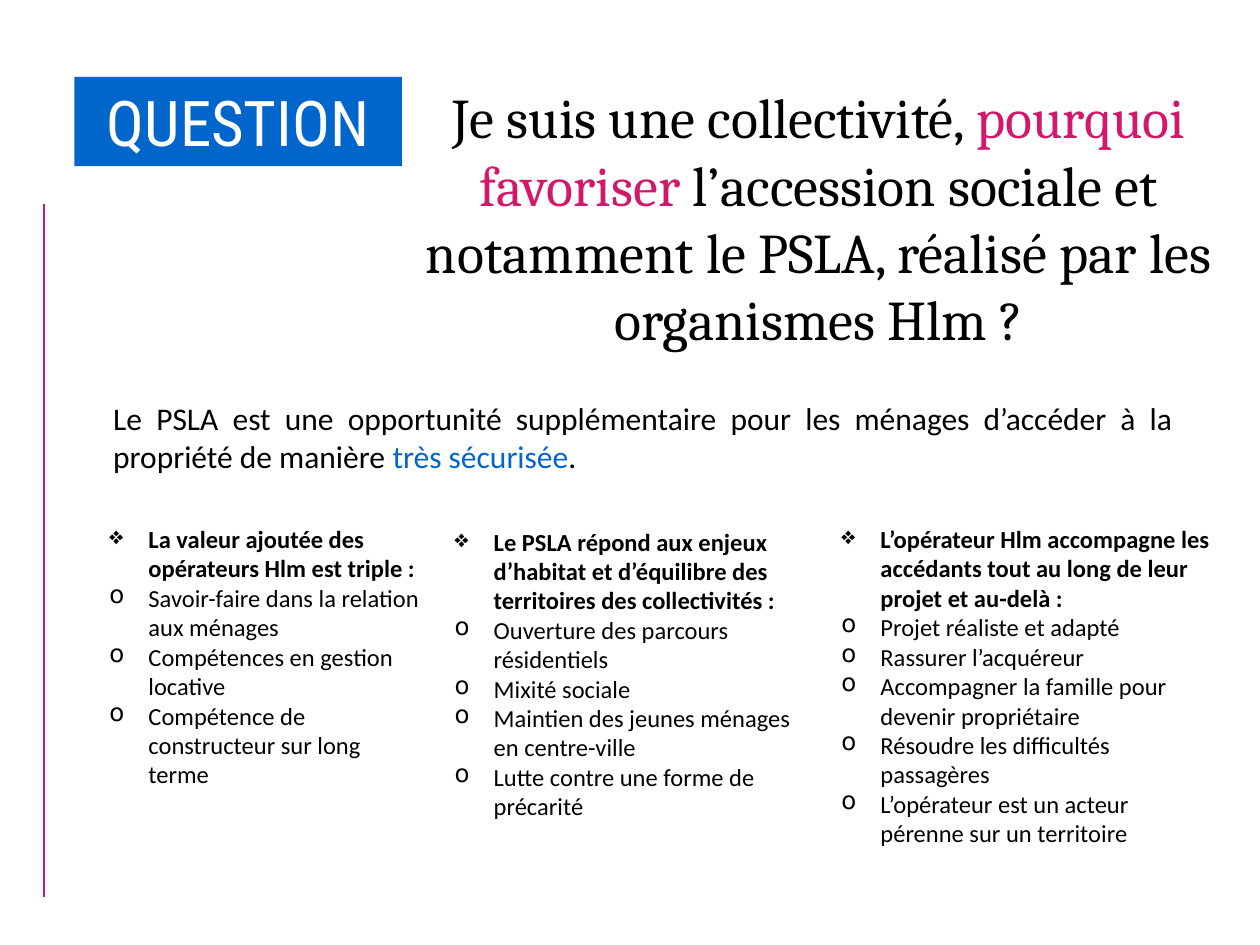
from lxml import etree
from pptx import Presentation
from pptx.dml.color import RGBColor
from pptx.enum import shapes, text
from pptx.oxml import ns
from pptx.util import Inches, Pt

BLACK, WHITE, BLUE, PINK = "000000", "FFFFFF", "0066CC", "D1196C"
INDENT = 0.31

TITLE = [
    ("Je suis une collectivité, ", BLACK),
    ("pourquoi favoriser", PINK),
    (" l’accession sociale et notamment le PSLA, réalisé par les organismes Hlm ?", BLACK),
]
INTRO = [
    ("Le PSLA est une opportunité supplémentaire pour les ménages d’accéder "
     "à la propriété de manière ", BLACK),
    ("très sécurisée", BLUE),
    (".", BLACK),
]
COLUMNS = [
    ((0.77, 4.11, 2.66, 2.22), "La valeur ajoutée des opérateurs Hlm est triple :", [
        "Savoir-faire dans la relation aux ménages",
        "Compétences en gestion locative",
        "Compétence de constructeur sur long terme",
    ]),
    ((3.51, 4.13, 2.99, 2.46),
     "Le PSLA répond aux enjeux d’habitat et d’équilibre des territoires des collectivités :", [
        "Ouverture des parcours résidentiels",
        "Mixité sociale",
        "Maintien des jeunes ménages en centre-ville",
        "Lutte contre une forme de précarité",
    ]),
    ((6.58, 4.11, 3.17, 2.69),
     "L’opérateur Hlm accompagne les accédants tout au long de leur projet et au-delà :", [
        "Projet réaliste et adapté",
        "Rassurer l’acquéreur",
        "Accompagner la famille pour devenir propriétaire",
        "Résoudre les difficultés passagères",
        "L’opérateur est un acteur pérenne sur un territoire",
    ]),
]


def rgb(value):
    return RGBColor.from_string(value)


def add_box(s, box):
    tf = s.shapes.add_textbox(*map(Inches, box)).text_frame
    tf.word_wrap = True
    return tf


def add_runs(p, parts, font, size, bold=False):
    for content, color in parts:
        r = p.add_run()
        r.text = content
        r.font.name = font
        r.font.size = Pt(size)
        r.font.bold = bold
        r.font.color.rgb = rgb(color)


def add_bullet(p, char):
    pPr = p._p.get_or_add_pPr()
    pPr.set("marL", str(Inches(INDENT)))
    pPr.set("indent", str(-Inches(INDENT)))
    etree.SubElement(pPr, ns.qn("a:buChar")).set("char", char)


def add_column(s, box, heading, items):
    tf = add_box(s, box)
    for i, content in enumerate([heading] + items):
        p = tf.add_paragraph() if i else tf.paragraphs[0]
        add_bullet(p, "o" if i else "❖")
        add_runs(p, [(content, BLACK)], "Calibri", 14, bold=i == 0)


def main():
    prs = Presentation()
    prs.slide_width, prs.slide_height = Inches(10), Inches(7.5)
    s = prs.slides.add_slide(prs.slide_layouts[6])

    p = add_box(s, (3.27, 0.61, 6.46, 2.26)).paragraphs[0]
    p.alignment = text.PP_ALIGN.CENTER
    add_runs(p, TITLE, "Cambria", 32)

    label = s.shapes.add_shape(shapes.MSO_SHAPE.RECTANGLE,
                               *map(Inches, (0.59, 0.61, 2.6, 0.71)))
    label.shadow.inherit = False
    label.fill.solid()
    label.fill.fore_color.rgb = rgb(BLUE)
    label.line.fill.background()
    p = label.text_frame.paragraphs[0]
    p.alignment = text.PP_ALIGN.CENTER
    add_runs(p, [("QUESTION", WHITE)], "Roboto Condensed", 36)

    rule = s.shapes.add_connector(shapes.MSO_CONNECTOR.STRAIGHT,
                                  *map(Inches, (0.35, 1.62, 0.35, 7.12)))
    rule.line.color.rgb = rgb(PINK)
    rule.line.width = Pt(1.5)
    etree.SubElement(rule._element.spPr, ns.qn("a:effectLst"))

    p = add_box(s, (0.8, 3.12, 8.61, 0.71)).paragraphs[0]
    p.alignment = text.PP_ALIGN.JUSTIFY
    add_runs(p, INTRO, "Calibri", 18)

    for column in COLUMNS:
        add_column(s, *column)

    prs.save("out.pptx")


if __name__ == "__main__":
    main()
